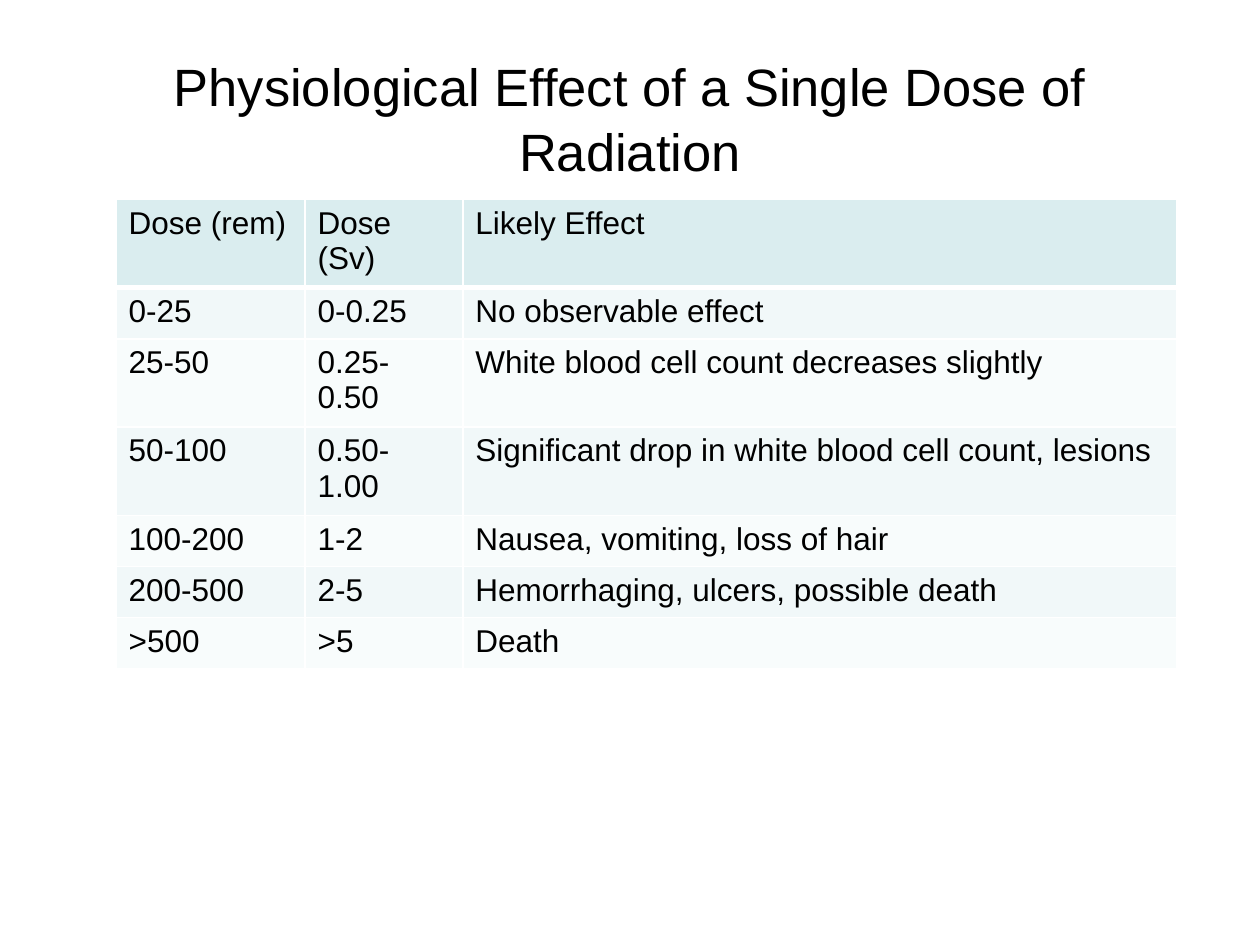
from lxml import etree
from pptx import Presentation, util as u
from pptx.dml.color import RGBColor
from pptx.enum import text
from pptx.oxml.ns import qn

ROWS = [
    ("Dose (rem)", "Dose (Sv)", "Likely Effect"),
    ("0-25", "0-0.25", "No observable effect"),
    ("25-50", "0.25-0.50", "White blood cell count decreases slightly"),
    ("50-100", "0.50-1.00", "Significant drop in white blood cell count, lesions"),
    ("100-200", "1-2", "Nausea, vomiting, loss of hair"),
    ("200-500", "2-5", "Hemorrhaging, ulcers, possible death"),
    (">500", ">5", "Death"),
]
WIDTHS = (3.81, 3.18, 14.4)
ROW_H = 1.03
HEAD, ODD, EVEN = "DAEDEF", "F1F8F9", "F8FCFC"


def color(code):
    return RGBColor.from_string(code)


def write(frame, words, size):
    frame.text = words
    font = frame.paragraphs[0].runs[0].font
    font.name = "Arial"
    font.size = u.Pt(size)
    font.bold = False
    font.color.rgb = color("000000")


def add_title(slide, words):
    box = slide.shapes.add_textbox(u.Cm(1.27), u.Cm(0.76), u.Cm(22.86), u.Cm(3.18))
    frame = box.text_frame
    frame.word_wrap = True
    frame.vertical_anchor = text.MSO_ANCHOR.MIDDLE
    write(frame, words, 30)
    para = frame.paragraphs[0]
    para.alignment = text.PP_ALIGN.CENTER
    para.line_spacing = 1.04


def add_border(cell, side, width):
    props = cell._tc.get_or_add_tcPr()
    line = etree.SubElement(props, qn(f"a:ln{side}"), w=str(u.Pt(width)))
    fill = etree.SubElement(line, qn("a:solidFill"))
    etree.SubElement(fill, qn("a:srgbClr"), val="FFFFFF")


def fill_cell(cell, words, row):
    write(cell.text_frame, words, 18)
    for side in "LRTB":
        add_border(cell, side, 3 if row == 0 and side == "B" else 1)
    cell.fill.solid()
    shade = HEAD if row == 0 else ODD if row % 2 else EVEN
    cell.fill.fore_color.rgb = color(shade)


def add_doses(slide):
    table = slide.shapes.add_table(
        len(ROWS), len(WIDTHS), u.Cm(2.34), u.Cm(4.02),
        u.Cm(sum(WIDTHS)), u.Cm(ROW_H * len(ROWS))).table
    for col, width in zip(table.columns, WIDTHS):
        col.width = u.Cm(width)
    for row, entries in enumerate(ROWS):
        table.rows[row].height = u.Cm(ROW_H)
        for col, words in enumerate(entries):
            fill_cell(table.cell(row, col), words, row)


def main():
    deck = Presentation()
    deck.slide_width, deck.slide_height = u.Cm(25.4), u.Cm(19.05)
    slide = deck.slides.add_slide(deck.slide_layouts[6])
    add_title(slide, "Physiological Effect of a Single Dose of Radiation")
    add_doses(slide)
    deck.save("out.pptx")


if __name__ == "__main__":
    main()
